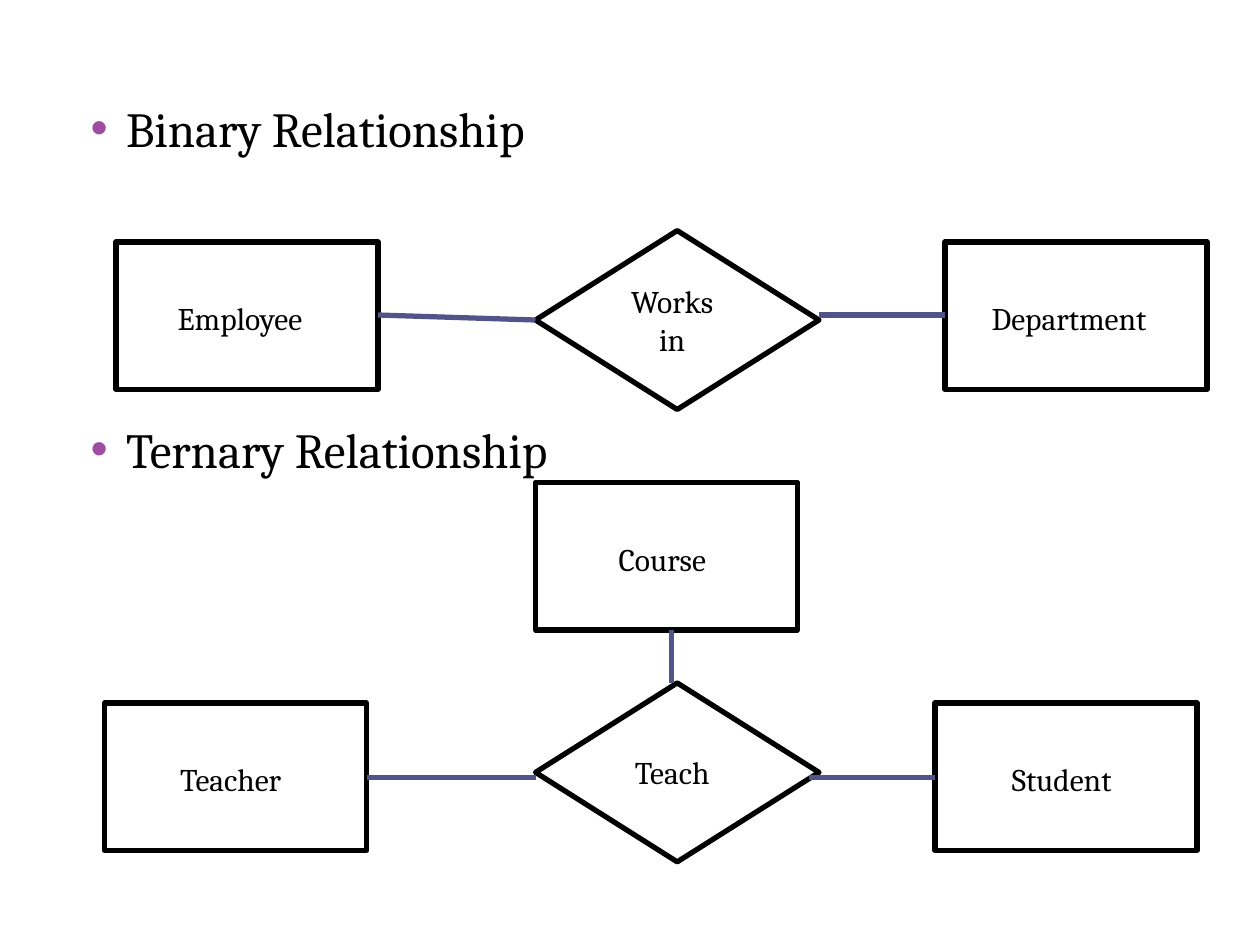
from lxml import etree
from pptx import Presentation
from pptx.dml.color import RGBColor
from pptx.enum.shapes import MSO_CONNECTOR as Link, MSO_SHAPE as Shape
from pptx.enum.text import MSO_ANCHOR as Anchor, MSO_AUTO_SIZE as Fit, PP_ALIGN as Align
from pptx.oxml.ns import qn
from pptx.util import Inches, Pt

INK, WIRE, DOT = "000000", "525389", "9F4DA2"
BOX_W, BOX_H = 2.08, 1.17
GEM_W, GEM_H = 2.25, 1.42
HEAD = {"name": "Cambria", "size": Pt(28)}
LABEL = {"name": "Cambria", "size": Pt(18)}


def color(code):
    return RGBColor.from_string(code)


def assign(item, values):
    for key, value in values.items():
        setattr(item, key, value)


def frame(shape, text, font, align, **values):
    """Write one formatted paragraph and set the frame's margins."""
    body = shape.text_frame
    base = {"word_wrap": True, "auto_size": Fit.NONE,
            "margin_left": 0, "margin_right": 0, "margin_top": 0, "margin_bottom": 0}
    assign(body, base | values)
    body.text = text
    para = body.paragraphs[0]
    para.alignment = align
    assign(para.font, font)
    para.font.color.rgb = color(INK)
    return para


def heading(holder, text, x, y):
    assign(holder, {"left": Inches(x), "top": Inches(y),
                    "width": Inches(4), "height": Inches(0.49)})
    para = frame(holder, text, HEAD, Align.LEFT,
                 margin_top=Inches(0.01), vertical_anchor=Anchor.TOP)
    para.space_before = Pt(0.9)
    # Coloured bullet with a hanging indent
    props = para._p.get_or_add_pPr()
    props.set("marL", str(Inches(0.29)))
    props.set("indent", str(Inches(-0.28)))
    tint = etree.SubElement(props, qn("a:buClr"))
    etree.SubElement(tint, qn("a:srgbClr"), val=DOT)
    etree.SubElement(props, qn("a:buFont"), typeface="Arial")
    etree.SubElement(props, qn("a:buChar"), char="•")
    # Schema order: bullet parts come before the run defaults
    run = props.find(qn("a:defRPr"))
    if run is not None:
        props.append(run)


def outline(slide, kind, x, y, w, h):
    shape = slide.shapes.add_shape(kind, Inches(x), Inches(y), Inches(w), Inches(h))
    shape.shadow.inherit = False
    shape.fill.background()
    shape.line.color.rgb = color(INK)
    shape.line.width = Pt(3)
    return shape


def entity(slide, text, x, y, inset):
    shape = outline(slide, Shape.RECTANGLE, x, y, BOX_W, BOX_H)
    frame(shape, text, LABEL, Align.LEFT, margin_left=Inches(inset),
          margin_top=Inches(0.04), vertical_anchor=Anchor.MIDDLE)


def relation(slide, text, x, y):
    shape = outline(slide, Shape.DIAMOND, x, y, GEM_W, GEM_H)
    frame(shape, text, LABEL, Align.CENTER, margin_left=Inches(0.16),
          margin_right=Inches(0.24), vertical_anchor=Anchor.MIDDLE)


def link(slide, x1, y1, x2, y2):
    line = slide.shapes.add_connector(
        Link.STRAIGHT, Inches(x1), Inches(y1), Inches(x2), Inches(y2))
    line.line.color.rgb = color(WIRE)
    line.line.width = Pt(3)
    etree.SubElement(line._element.spPr, qn("a:effectLst"))


def binary(slide, holder, x, y):
    heading(holder, "Binary Relationship", x, y)
    left, gem, right = x + 0.21, x + 3.54, x + 6.79
    top, mid = y + 1.15, y + 1.73
    entity(slide, "Employee", left, top, 0.49)
    relation(slide, "Works in", gem, y + 1.06)
    entity(slide, "Department", right, top, 0.37)
    link(slide, left + BOX_W, mid, gem, mid + 0.04)
    link(slide, gem + GEM_W, mid, right, mid)


def ternary(slide, holder, x, y):
    heading(holder, "Ternary Relationship", x, y)
    left, gem, right = x + 0.12, x + 3.54, x + 6.71
    top, mid, peak = y + 2.26, y + 2.85, y + 2.1
    roof, stem = y + 0.51, x + 4.62
    entity(slide, "Teacher", left, top, 0.6)
    relation(slide, "Teach", gem, peak)
    entity(slide, "Student", right, top, 0.61)
    entity(slide, "Course", gem, roof, 0.66)
    link(slide, left + BOX_W, mid, gem, mid)
    link(slide, right - 1, mid, right, mid)
    link(slide, stem, peak, stem, roof + BOX_H)


def main():
    deck = Presentation()
    assign(deck, {"slide_width": Inches(10), "slide_height": Inches(7.5)})
    # Two Content layout: one body placeholder for each diagram
    slide = deck.slides.add_slide(deck.slide_layouts[3])
    title, first, second = slide.placeholders
    title._element.getparent().remove(title._element)
    binary(slide, first, 0.71, 0.77)
    ternary(slide, second, 0.71, 3.32)
    deck.save("out.pptx")


if __name__ == "__main__":
    main()
